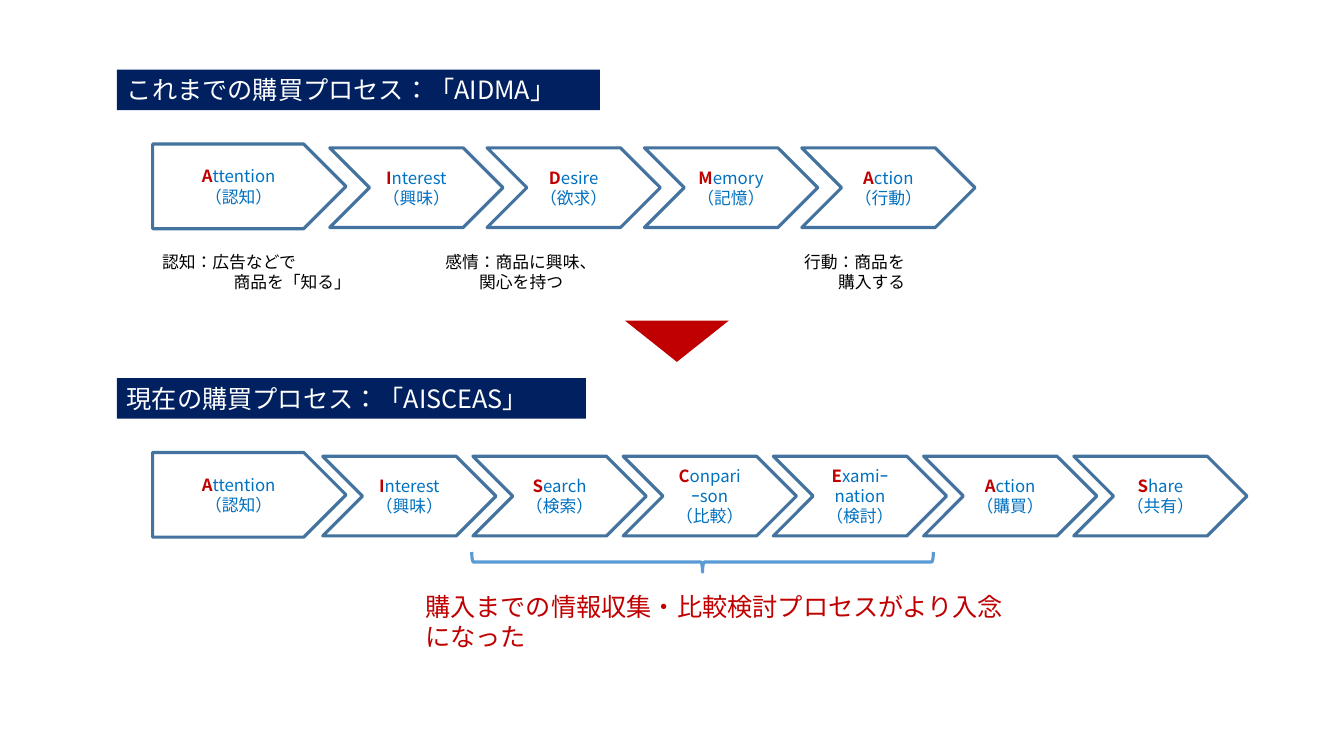
from collections import namedtuple
from dataclasses import dataclass

from lxml.etree import SubElement
from pptx import Presentation
from pptx.dml.color import RGBColor
from pptx.enum.lang import MSO_LANGUAGE_ID
from pptx.enum.shapes import MSO_SHAPE
from pptx.enum.text import MSO_ANCHOR, PP_ALIGN
from pptx.oxml.ns import qn
from pptx.util import Pt


@dataclass(frozen=True)
class Theme:
    font: str = "Noto Sans CJK JP"
    heading_size: int = 18
    body_size: int = 12
    line_width: float = 2.25
    navy: str = "002060"
    red: str = "C00000"
    blue: str = "0070C0"
    outline: str = "43739E"
    brace: str = "5B9BD5"
    white: str = "FFFFFF"
    black: str = "000000"


THEME = Theme()
Box = namedtuple("Box", "left top width height")
Step = namedtuple("Step", "initial rest")
Note = namedtuple("Note", "offset lines indent")


def format_run(run, size, color, bold=False):
    run.font.name = THEME.font
    run.font.size = Pt(size)
    run.font.bold = bold
    run.font.language_id = MSO_LANGUAGE_ID.JAPANESE
    run.font.color.rgb = RGBColor.from_string(color)
    SubElement(run.font._element, qn("a:ea")).set("typeface", THEME.font)


def add_figure(slide, kind, box, fill=None, line=None):
    figure = slide.shapes.add_shape(kind, *map(Pt, box))
    figure.shadow.inherit = False
    if fill:
        figure.fill.solid()
        figure.fill.fore_color.rgb = RGBColor.from_string(fill)
    else:
        figure.fill.background()
    if line:
        figure.line.color.rgb = RGBColor.from_string(line)
        figure.line.width = Pt(THEME.line_width)
    else:
        figure.line.fill.background()
    return figure


def add_label(slide, box, lines, size, color, indent=0):
    label = slide.shapes.add_textbox(*map(Pt, box)).text_frame
    label.word_wrap = True
    label.text = "\n".join(lines)
    for paragraph in label.paragraphs:
        format_run(paragraph.runs[0], size, color)
    for continuation in label.paragraphs[1:]:
        continuation._p.get_or_add_pPr().set("marL", str(Pt(indent)))


def add_banner(slide, box, heading):
    banner = add_figure(slide, MSO_SHAPE.RECTANGLE, box, fill=THEME.navy).text_frame
    banner.word_wrap = True
    banner.vertical_anchor = MSO_ANCHOR.TOP
    banner.text = heading
    banner.paragraphs[0].alignment = PP_ALIGN.LEFT
    format_run(banner.paragraphs[0].runs[0], THEME.heading_size, THEME.white)


def add_step(slide, kind, box, step):
    frame = add_figure(slide, kind, box, line=THEME.outline).text_frame
    frame.word_wrap = True
    frame.vertical_anchor = MSO_ANCHOR.MIDDLE
    first_line, *other_lines = step.rest
    frame.text = "\n".join([step.initial, *other_lines])
    frame.paragraphs[0].add_run().text = first_line
    for paragraph in frame.paragraphs:
        paragraph.alignment = PP_ALIGN.CENTER
        for run in paragraph.runs:
            format_run(run, THEME.body_size, THEME.blue)
    initial = frame.paragraphs[0].runs[0]
    initial.font.bold = True
    initial.font.color.rgb = RGBColor.from_string(THEME.red)


def add_process(slide, box, heading, steps, chevron_offset, pitch):
    add_banner(slide, box, heading)
    row_left, row_top = box.left + 25.5, box.top + 53.2
    start, *followers = steps
    add_step(slide, MSO_SHAPE.PENTAGON, Box(row_left, row_top, 138.2, 60.5), start)
    for index, step in enumerate(followers):
        chevron_left = box.left + chevron_offset + index * pitch
        chevron = Box(chevron_left, row_top + 2.7, 123.8, 56.9)
        add_step(slide, MSO_SHAPE.CHEVRON, chevron, step)


def add_notes(slide, box, notes):
    for note in notes:
        place = Box(box.left + note.offset, box.top, 193, box.height)
        add_label(slide, place, note.lines, THEME.body_size, THEME.black, note.indent)


def add_transition(slide, box):
    add_figure(slide, MSO_SHAPE.ISOSCELES_TRIANGLE, box, fill=THEME.red).rotation = 180


def add_conclusion(slide, box, message):
    length, depth = 329.8, 14.4
    center_x, center_y = box.left + 205.2, box.top - 17.5
    upright = Box(center_x - depth / 2, center_y - length / 2, depth, length)
    add_figure(slide, MSO_SHAPE.RIGHT_BRACE, upright, line=THEME.brace).rotation = 90
    add_label(slide, box, [message], THEME.heading_size, THEME.red)


ATTENTION = Step("A", ["ttention", "（認知）"])
INTEREST = Step("I", ["nterest", "（興味）"])
PAST_STEPS = [
    ATTENTION,
    INTEREST,
    Step("D", ["esire", "（欲求）"]),
    Step("M", ["emory", "（記憶）"]),
    Step("A", ["ction", "（行動）"]),
]
CURRENT_STEPS = [
    ATTENTION,
    INTEREST,
    Step("S", ["earch", "（検索）"]),
    Step("C", ["onpari", "ｰson", "（比較）"]),
    Step("E", ["xamiｰnation", "（検討）"]),
    Step("A", ["ction", "（購買）"]),
    Step("S", ["hare", "（共有）"]),
]
NOTES = [
    Note(25.2, ["認知：広告などで", "商品を「知る」"], 51),
    Note(227.5, ["感情：商品に興味、", "関心を持つ"], 24.2),
    Note(483.8, ["行動：商品を", "購入する"], 24.2),
]


def main():
    presentation = Presentation()
    presentation.slide_width, presentation.slide_height = Pt(960), Pt(540)
    slide = presentation.slides.add_slide(presentation.slide_layouts[6])
    add_process(slide, Box(83.5, 49.7, 345, 29), "これまでの購買プロセス：「AIDMA」",
                PAST_STEPS, 152, 112.4)
    add_notes(slide, Box(83.5, 176.4, 720, 36), NOTES)
    add_transition(slide, Box(446.4, 229, 74.2, 29.5))
    add_process(slide, Box(83.5, 270, 335, 29), "現在の購買プロセス：「AISCEAS」",
                CURRENT_STEPS, 147, 107.3)
    add_conclusion(slide, Box(296.6, 419, 435, 29),
                   "購入までの情報収集・比較検討プロセスがより入念になった")
    presentation.save("out.pptx")


if __name__ == "__main__":
    main()
